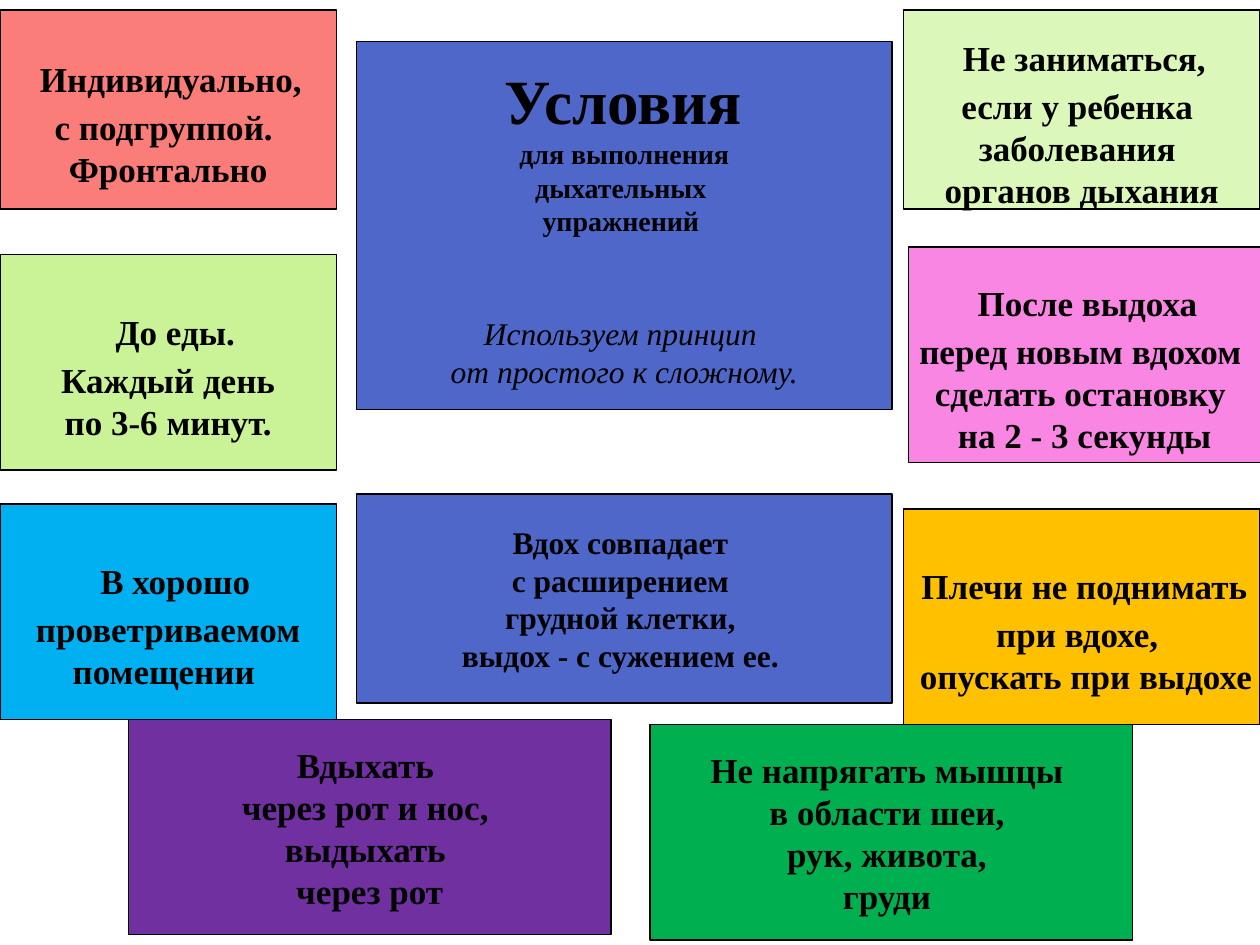
import pptx
import pptx.util
import pptx.dml.color
import pptx.enum.shapes
import pptx.enum.text

HUES = {
    "ink": "000000", "blue": "4E67C8", "coral": "FA7D7A", "lime": "CAF297",
    "sky": "00B0F0", "mint": "DCF7BA", "pink": "FA86E4", "gold": "FFC000",
    "plum": "7030A0", "green": "00B050",
}


class Deck:
    """Hold the style and the current slide, and draw its boxes."""

    def __init__(self):
        self.file = pptx.Presentation()
        self.file.slide_width = pptx.util.Inches(10)
        self.file.slide_height = pptx.util.Inches(7.5)
        self.slide = self.file.slides.add_slide(self.file.slide_layouts[5])

    def tint(self, name):
        return pptx.dml.color.RGBColor.from_string(HUES[name])

    def dress(self, shape, hue):
        shape.fill.solid()
        shape.fill.fore_color.rgb = self.tint(hue)
        shape.line.color.rgb = self.tint("ink")
        shape.line.width = pptx.util.Pt(0.75)
        frame = shape.text_frame
        frame.auto_size = pptx.enum.text.MSO_AUTO_SIZE.NONE
        frame.word_wrap = False
        frame.vertical_anchor = pptx.enum.text.MSO_ANCHOR.MIDDLE

    def add_run(self, para, text, size, face="Times New Roman", bold=True, slant=False):
        run = para.add_run()
        run.text = text
        font = run.font
        font.name, font.size = face, pptx.util.Pt(size)
        font.bold, font.italic = bold, slant
        font.color.rgb = self.tint("ink")

    def add_lines(self, shape, lines, size, lead=False):
        frame = shape.text_frame
        for i, text in enumerate(lines):
            para = frame.add_paragraph() if i else frame.paragraphs[0]
            para.alignment = pptx.enum.text.PP_ALIGN.CENTER
            if lead and i == 0:
                self.add_run(para, " ", 36, "Calibri")
            self.add_run(para, text, size)

    def title(self, place, hue, head, body, notes):
        shape = self.slide.shapes.title
        shape.left, shape.top, shape.width, shape.height = map(pptx.util.Inches, place)
        self.dress(shape, hue)
        self.add_lines(shape, [head], 36, True)
        rows = [(text, 16, False) for text in body]
        rows += [(text, 18, True) for text in notes]
        for i, (text, size, slant) in enumerate(rows):
            para = shape.text_frame.add_paragraph()
            para.alignment = pptx.enum.text.PP_ALIGN.CENTER
            if i == len(body):
                para.space_before = pptx.util.Pt(44)
            self.add_run(para, text, size, bold=not slant, slant=slant)

    def box(self, place, hue, lines, size=20, lead=False):
        shape = self.slide.shapes.add_shape(
            pptx.enum.shapes.MSO_SHAPE.RECTANGLE, *map(pptx.util.Inches, place))
        shape.shadow.inherit = False
        self.dress(shape, hue)
        self.add_lines(shape, lines, size, lead)


def main():
    deck = Deck()
    deck.title(
        (2.83, 0.33, 4.25, 2.92), "blue", "Условия ",
        ["для выполнения", "дыхательных ", "упражнений "],
        ["Используем принцип ", "от простого к сложному."])
    sides = [
        ((0, 0.08, 2.67, 1.58), "coral",
         ["Индивидуально, ", "с подгруппой. ", "Фронтально"]),
        ((0, 2.02, 2.67, 1.71), "lime",
         ["До еды.", "Каждый день", "по 3-6 минут."]),
        ((0, 4, 2.67, 1.71), "sky",
         ["В хорошо", "проветриваемом", "помещении "]),
        ((7.17, 0.08, 2.83, 1.58), "mint",
         ["Не заниматься, ", "если у ребенка ", "заболевания ", "органов дыхания"]),
        ((7.21, 1.96, 2.8, 1.71), "pink",
         ["После выдоха ", "перед новым вдохом ", "сделать остановку ",
          "на 2 - 3 секунды"]),
        ((7.17, 4.04, 2.83, 1.71), "gold",
         ["Плечи не поднимать ", "при вдохе, ", " опускать при выдохе"]),
    ]
    for place, hue, lines in sides:
        deck.box(place, hue, lines, lead=True)
    deck.box(
        (2.83, 3.92, 4.25, 1.66), "blue",
        ["Вдох совпадает ", "с расширением ", "грудной клетки, ",
         "выдох - с сужением ее. "], 18)
    deck.box(
        (1.02, 5.71, 3.83, 1.71), "plum",
        ["Вдыхать ", "через рот и нос, ", "выдыхать ", "через рот"])
    deck.box(
        (5.16, 5.75, 3.83, 1.71), "green",
        ["Не напрягать мышцы ", "в области шеи, ", "рук, живота, ", "груди "])
    deck.file.save("out.pptx")


if __name__ == "__main__":
    main()
